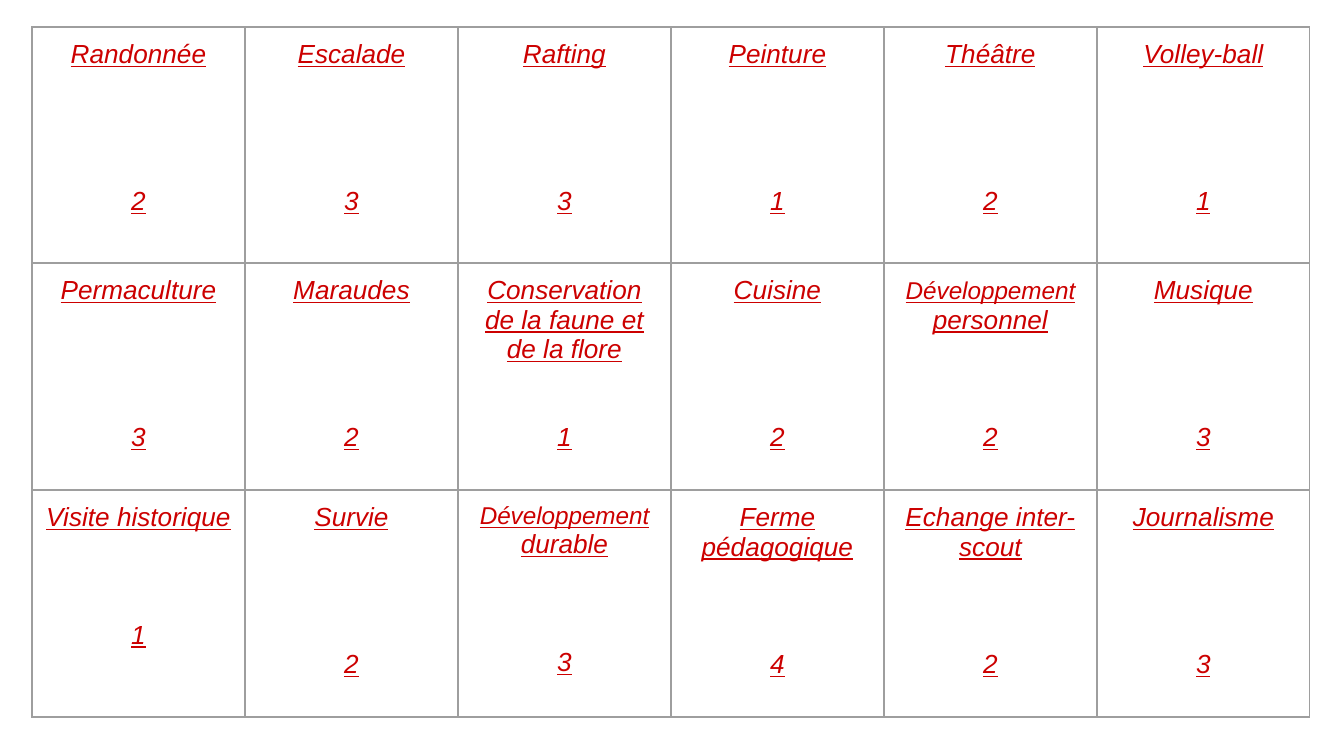
import dataclasses

import lxml.etree
import pptx
import pptx.dml.color
import pptx.enum.text
import pptx.oxml.ns
import pptx.util

WIDTH, HEIGHT = 1344, 756
SCALE = 914400 * 10 / WIDTH  # EMU per px
LEFT, TOP = 32, 27
COL = 213
ROWS = [236, 227, 227]
INSET = 13
LINE = 15.75  # line pitch in points
RED, GREY = "CC0000", "9E9E9E"


@dataclasses.dataclass
class Card:
    title: str
    count: int
    gap: int = 4  # free lines between title and count
    small: str = ""  # first word, set one point smaller


CARDS = [
    [Card("Randonnée", 2), Card("Escalade", 3), Card("Rafting", 3),
     Card("Peinture", 1), Card("Théâtre", 2), Card("Volley-ball", 1)],
    [Card("Permaculture", 3), Card("Maraudes", 2),
     Card("Conservation de la faune et de la flore", 1, gap=2),
     Card("Cuisine", 2),
     Card(" personnel", 2, gap=3, small="Développement"),
     Card("Musique", 3)],
    [Card("Visite historique", 1, gap=3), Card("Survie", 2),
     Card("durable", 3, gap=3, small="Développement "),
     Card("Ferme pédagogique", 4, gap=3),
     Card("Echange inter-scout", 2, gap=3), Card("Journalisme", 3)],
]


def px(n: int) -> pptx.util.Emu:
    return pptx.util.Emu(round(n * SCALE))


def paint(hue: str) -> pptx.dml.color.RGBColor:
    return pptx.dml.color.RGBColor.from_string(hue)


def write(para, text: str, *, size: int = 14, hue: str = RED) -> None:
    run = para.add_run()
    run.text = text
    font = run.font
    font.name = "Arial"
    font.size = pptx.util.Pt(size)
    font.italic = font.underline = True
    font.color.rgb = paint(hue)


def frame(cell, hue: str, width: float) -> None:
    """Draw a solid border on all four sides of the cell."""
    qn = pptx.oxml.ns.qn
    props = cell._tc.get_or_add_tcPr()
    for side in ("lnL", "lnR", "lnT", "lnB"):
        line = lxml.etree.SubElement(props, qn(f"a:{side}"),
                                     w=str(pptx.util.Pt(width)))
        fill = lxml.etree.SubElement(line, qn("a:solidFill"))
        lxml.etree.SubElement(fill, qn("a:srgbClr"), val=hue)


def draw(cell, card: Card) -> None:
    frame(cell, GREY, 0.75)
    cell.fill.background()
    cell.margin_left = cell.margin_right = px(INSET)
    cell.margin_top = cell.margin_bottom = px(INSET)
    title = cell.text_frame.paragraphs[0]
    count = cell.text_frame.add_paragraph()
    if card.small:
        write(title, card.small, size=13)
    write(title, card.title)
    write(count, str(card.count))
    count.space_before = pptx.util.Pt(card.gap * LINE)
    for para in (title, count):
        para.alignment = pptx.enum.text.PP_ALIGN.CENTER


def main() -> None:
    deck = pptx.Presentation()
    deck.slide_width, deck.slide_height = px(WIDTH), px(HEIGHT)
    slide = deck.slides.add_slide(deck.slide_layouts[6])
    cols = len(CARDS[0])
    table = slide.shapes.add_table(len(ROWS), cols, px(LEFT), px(TOP),
                                   px(COL * cols), px(sum(ROWS))).table
    table.first_row = table.horz_banding = False
    for col in table.columns:
        col.width = px(COL)
    for row, height, cards in zip(table.rows, ROWS, CARDS):
        row.height = px(height)
        for cell, card in zip(row.cells, cards):
            draw(cell, card)
    deck.save("out.pptx")


if __name__ == "__main__":
    main()
